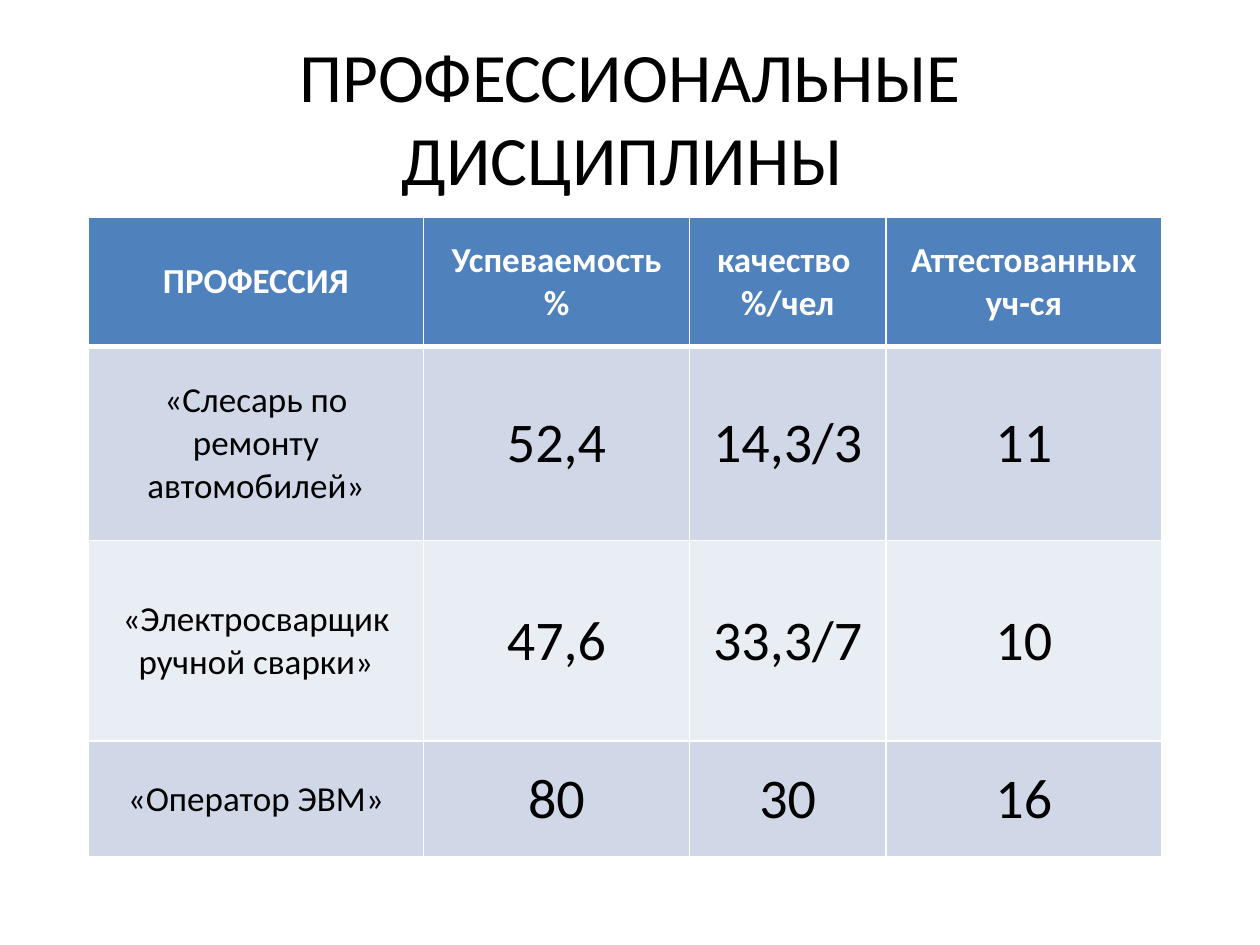
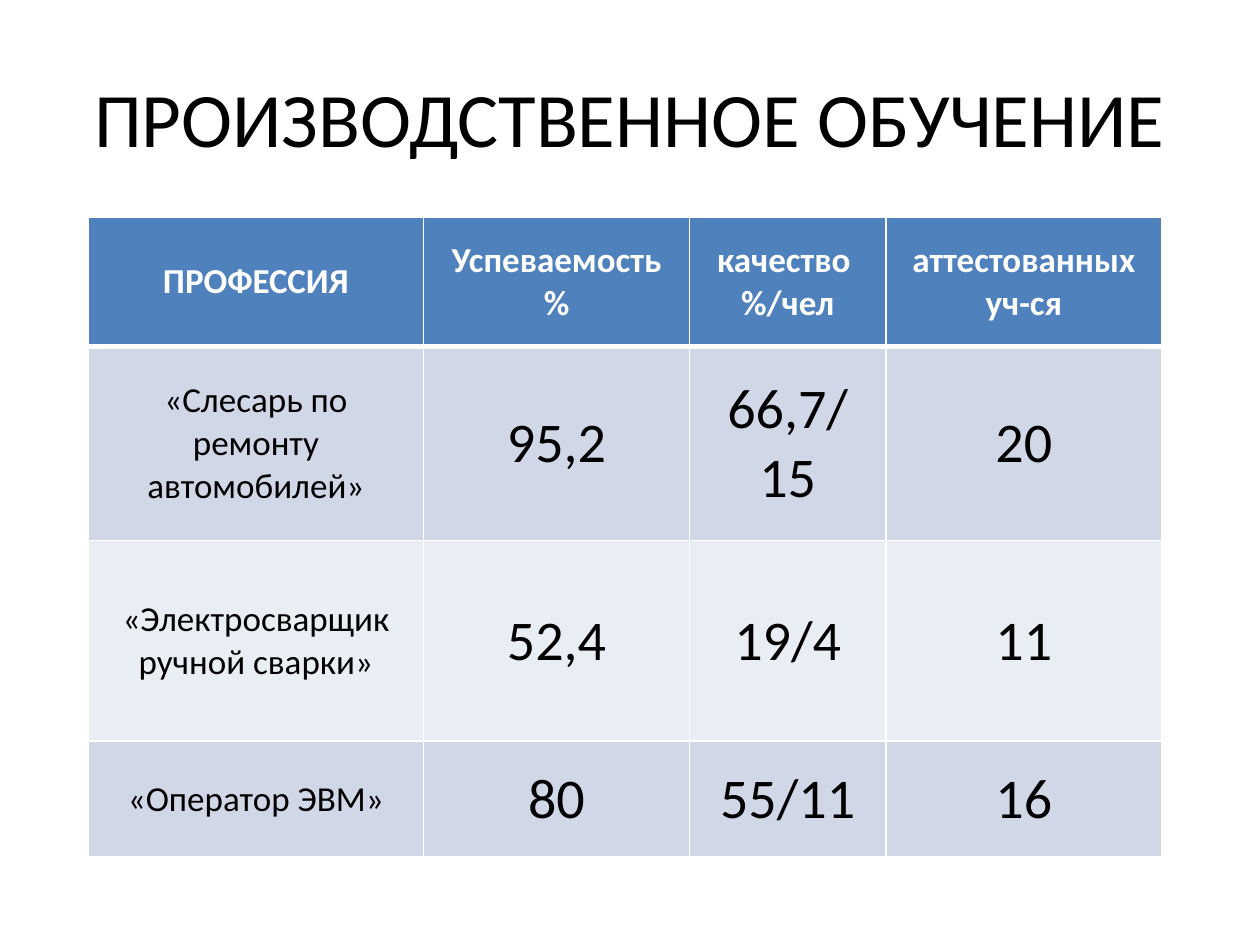
from lxml.etree import SubElement
from pptx import Presentation
from pptx.dml.color import RGBColor
from pptx.enum.text import MSO_ANCHOR as Anchor, PP_ALIGN as Align
from pptx.oxml import parse_xml
from pptx.oxml.ns import nsdecls, qn
from pptx.util import Cm, Pt

# Content
PROFESSIONS = [
    "«Слесарь по ремонту автомобилей»",
    "«Электросварщик ручной сварки»",
    "«Оператор ЭВМ»",
]
HEADINGS = ["ПРОФЕССИЯ", "Успеваемость\n%", "качество \n%/чел"]
SLIDES = [
    {
        "title": "ПРОФЕССИОНАЛЬНЫЕ ДИСЦИПЛИНЫ ",
        "title_size": 39.6,
        "last_heading": "Аттестованных уч-ся",
        "results": [
            ("52,4", "14,3/3", "11"),
            ("47,6", "33,3/7", "10"),
            ("80", "30", "16"),
        ],
    },
    {
        "title": "ПРОИЗВОДСТВЕННОЕ ОБУЧЕНИЕ",
        "title_size": 44,
        "last_heading": "аттестованных уч-ся",
        "results": [
            ("95,2", "66,7/\n15", "20"),
            ("52,4", "19/4", "11"),
            ("80", "55/11", "16"),
        ],
    },
]

# Shared look
COLORS = {
    "text": "000000",
    "header_text": "FFFFFF",
    "header": "4F81BD",
    "band_dark": "D0D8E8",
    "band_light": "E9EDF4",
    "border": "FFFFFF",
}
FONT = "Calibri"
TITLE_PLACE = (Cm(1.27), Cm(0.76), Cm(22.86), Cm(3.18))
TABLE_CORNER = (Cm(1.78), Cm(4.37))
COLUMN_WIDTHS = [Cm(6.76), Cm(5.36), Cm(3.96), Cm(5.56)]
ROW_HEIGHTS = [Cm(2.62), Cm(3.91), Cm(4.04), Cm(2.34)]
THIN, THICK = Pt(1), Pt(3)


def write(frame, text, *, size, color="text", bold=False):
    """Fill a text frame with centred paragraphs, one for each line."""
    frame.word_wrap = True
    for index, line in enumerate(text.split("\n")):
        para = frame.paragraphs[0] if index == 0 else frame.add_paragraph()
        para.alignment = Align.CENTER
        span = para.add_run()
        span.text = line
        span.font.name = FONT
        span.font.size = Pt(size)
        span.font.bold = bold
        span.font.color.rgb = RGBColor.from_string(COLORS[color])


def add_borders(cell, top, bottom):
    """Draw the four cell borders; they precede the fill in the cell XML."""
    properties = cell._tc.get_or_add_tcPr()
    sides = {"lnL": THIN, "lnR": THIN, "lnT": top, "lnB": bottom}
    for index, (side, width) in enumerate(sides.items()):
        line = parse_xml(f'<a:{side} {nsdecls("a")} w="{width}"/>')
        fill = SubElement(line, qn("a:solidFill"))
        SubElement(fill, qn("a:srgbClr"), val=COLORS["border"])
        properties.insert(index, line)


def add_title(page, text, size):
    box = page.shapes.add_textbox(*TITLE_PLACE)
    box.text_frame.vertical_anchor = Anchor.MIDDLE
    write(box.text_frame, text, size=size)


def add_results(page, rows):
    table = page.shapes.add_table(
        len(rows), len(COLUMN_WIDTHS), *TABLE_CORNER,
        sum(COLUMN_WIDTHS), sum(ROW_HEIGHTS),
    ).table
    for column, width in zip(table.columns, COLUMN_WIDTHS):
        column.width = width
    for row, height in zip(table.rows, ROW_HEIGHTS):
        row.height = height

    for r, texts in enumerate(rows):
        header = r == 0
        band = "header" if header else "band_dark" if r % 2 else "band_light"
        for c, text in enumerate(texts):
            cell = table.cell(r, c)
            cell.vertical_anchor = Anchor.MIDDLE
            cell.fill.solid()
            cell.fill.fore_color.rgb = RGBColor.from_string(COLORS[band])
            add_borders(cell, THICK if r == 1 else THIN, THICK if header else THIN)
            write(
                cell.text_frame, text,
                size=20 if header or c == 0 else 32,
                color="header_text" if header else "text",
                bold=header,
            )


def main():
    deck = Presentation()
    deck.slide_width, deck.slide_height = Cm(25.4), Cm(19.05)
    for content in SLIDES:
        page = deck.slides.add_slide(deck.slide_layouts[6])
        add_title(page, content["title"], content["title_size"])
        rows = [[*HEADINGS, content["last_heading"]]]
        rows += [[name, *values] for name, values in zip(PROFESSIONS, content["results"])]
        add_results(page, rows)
    deck.save("out.pptx")


if __name__ == "__main__":
    main()
